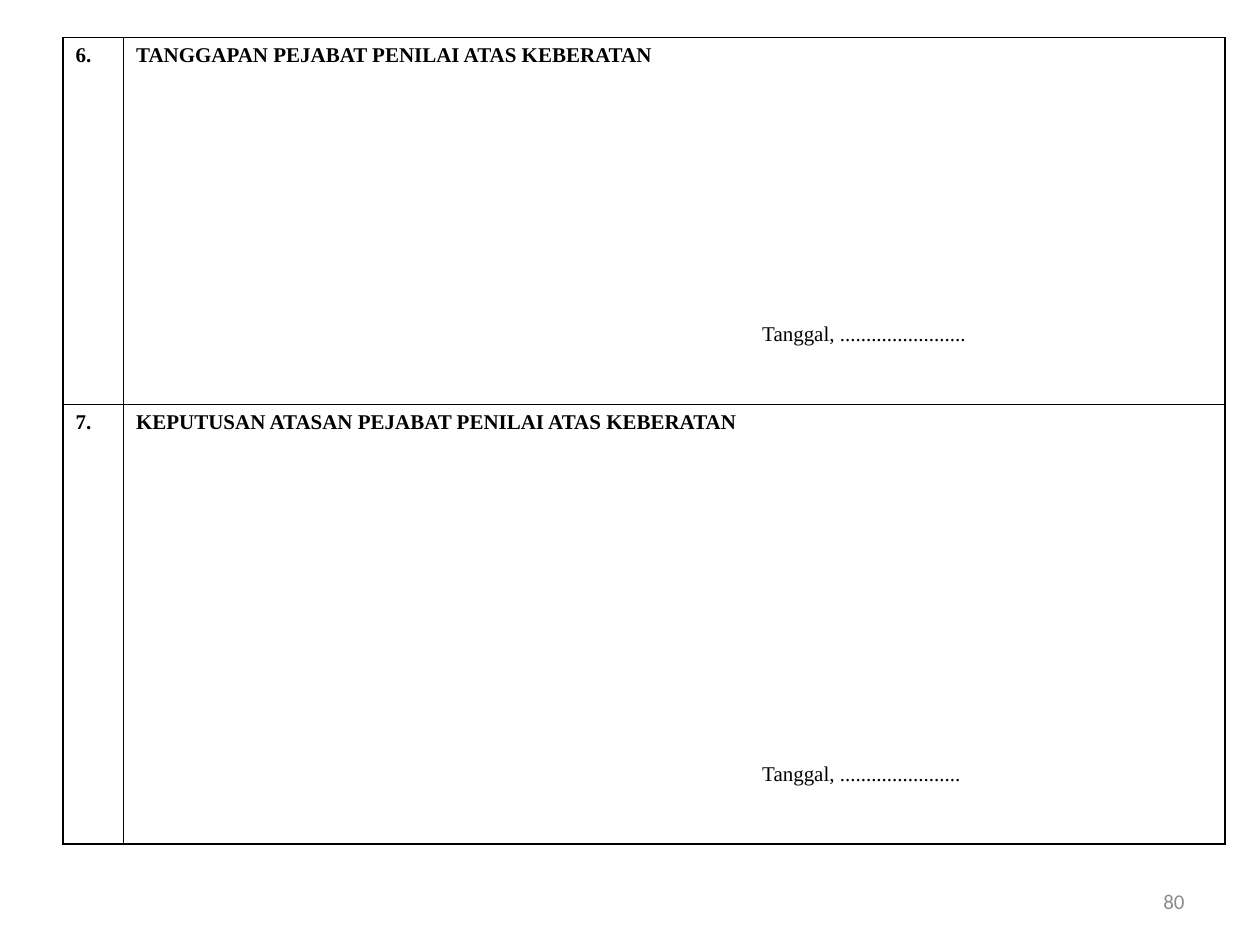
from dataclasses import dataclass

from lxml import etree
from pptx import Presentation
from pptx.dml.color import RGBColor
from pptx.enum.text import MSO_ANCHOR, PP_ALIGN
from pptx.oxml.ns import qn
from pptx.table import Table, _Cell
from pptx.text.text import _Paragraph
from pptx.util import Cm, Pt

TOP, MIDDLE, BOTTOM = MSO_ANCHOR.TOP, MSO_ANCHOR.MIDDLE, MSO_ANCHOR.BOTTOM
LEFT, RIGHT, JUSTIFY = PP_ALIGN.LEFT, PP_ALIGN.RIGHT, PP_ALIGN.JUSTIFY

BLACK = RGBColor(0x00, 0x00, 0x00)
GREY = RGBColor(0x8C, 0x8C, 0x8C)
FORM_FONT = "Times New Roman"
PAGE_FONT = "Calibri"

BLANK_LAYOUT = 6
COLUMN_WIDTHS = (Cm(1.22), Cm(12.62), Cm(9.58))
DATE_BOTTOM_MARGIN = Cm(1.17)


@dataclass(frozen=True)
class FormSection:
    number: str
    heading: str
    date_line: str
    height: Cm


SECTIONS = (
    FormSection("6.", "TANGGAPAN PEJABAT PENILAI ATAS KEBERATAN",
                "Tanggal, ........................", Cm(7.39)),
    FormSection("7.", "KEPUTUSAN ATASAN PEJABAT PENILAI ATAS KEBERATAN",
                "Tanggal, .......................", Cm(8.86)),
)


def format_paragraph(paragraph: _Paragraph, font_name: str, color: RGBColor,
                     alignment: PP_ALIGN, bold: bool = False) -> None:
    paragraph.alignment = alignment
    paragraph.font.name = font_name
    paragraph.font.size = Pt(12)
    paragraph.font.bold = bold
    paragraph.font.color.rgb = color


def set_borders(cell: _Cell, sides: str) -> None:
    """Draw the sides named among L, R, T and B, and hide the others."""
    properties = cell._tc.get_or_add_tcPr()
    for side in "LRTB":
        line = etree.SubElement(properties, qn(f"a:ln{side}"), w=str(Pt(1)))
        if side in sides:
            fill = etree.SubElement(line, qn("a:solidFill"))
            etree.SubElement(fill, qn("a:srgbClr"), val=str(BLACK))
        else:
            etree.SubElement(line, qn("a:noFill"))


def fill_cell(cell: _Cell, text: str, sides: str, bold: bool = True,
              alignment: PP_ALIGN = LEFT, anchor: MSO_ANCHOR = TOP) -> None:
    cell.text = text
    cell.vertical_anchor = anchor
    format_paragraph(cell.text_frame.paragraphs[0], FORM_FONT, BLACK,
                     alignment, bold)
    set_borders(cell, sides)
    cell.fill.background()


def fill_section(table: Table, row: int, section: FormSection) -> None:
    table.rows[row].height = section.height
    number, heading, date = (table.cell(row, column) for column in range(3))
    fill_cell(number, section.number, "LRTB", alignment=JUSTIFY)
    fill_cell(heading, section.heading, "LTB")
    heading.margin_right = 0
    fill_cell(date, section.date_line, "RTB", bold=False, anchor=BOTTOM)
    date.margin_bottom = DATE_BOTTOM_MARGIN


def main() -> None:
    presentation = Presentation()
    presentation.slide_width = Cm(25.4)
    presentation.slide_height = Cm(19.05)
    slide = presentation.slides.add_slide(
        presentation.slide_layouts[BLANK_LAYOUT])

    form = slide.shapes.add_table(
        len(SECTIONS), len(COLUMN_WIDTHS), Cm(1.27), Cm(0.76),
        sum(COLUMN_WIDTHS), sum(section.height for section in SECTIONS)).table
    form.first_row = False
    form.horz_banding = False
    for column, width in zip(form.columns, COLUMN_WIDTHS):
        column.width = width
    for row, section in enumerate(SECTIONS):
        fill_section(form, row, section)

    page_number = slide.shapes.add_textbox(
        Cm(18.21), Cm(17.65), Cm(5.92), Cm(1.02)).text_frame
    page_number.word_wrap = True
    page_number.vertical_anchor = MIDDLE
    page_number.text = "80"
    format_paragraph(page_number.paragraphs[0], PAGE_FONT, GREY, RIGHT)

    presentation.save("out.pptx")


if __name__ == "__main__":
    main()
